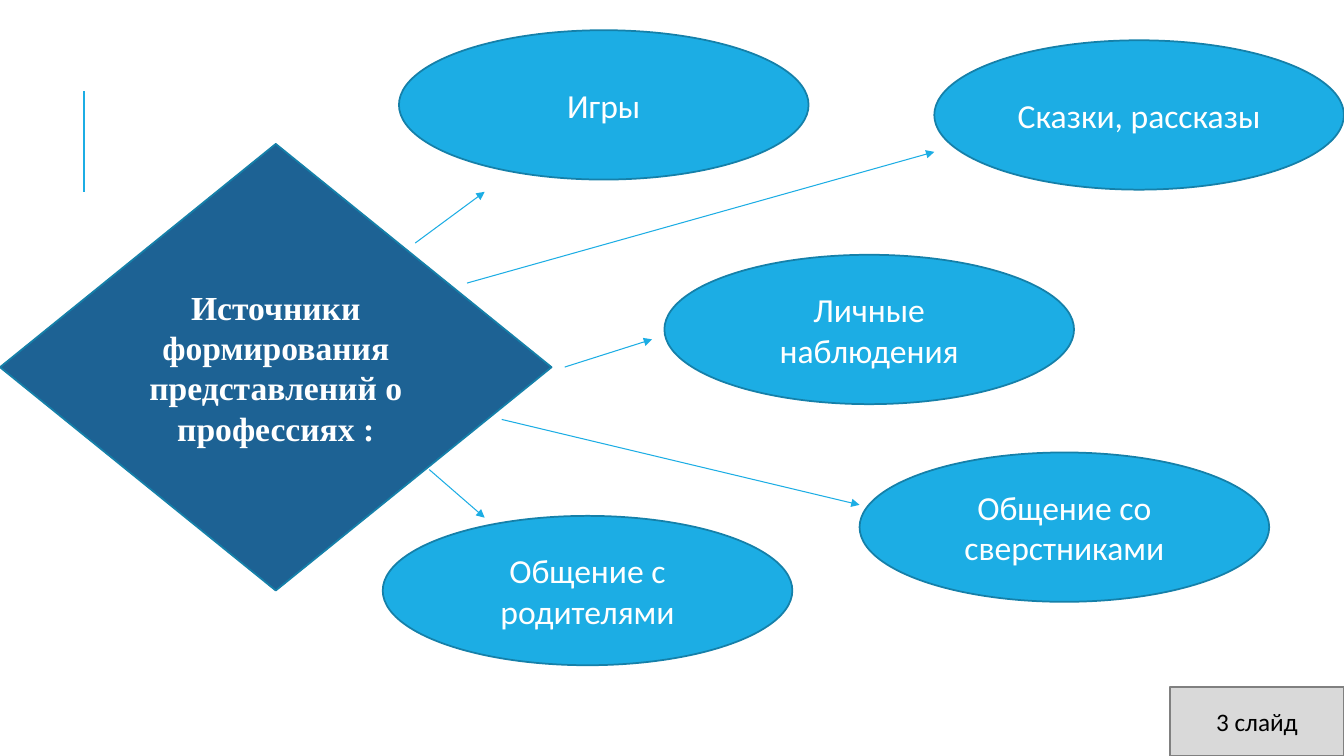
import pptx
import pptx.util
import pptx.dml.color
import pptx.enum.shapes
import pptx.enum.text
import pptx.oxml
import pptx.oxml.ns

Pt = pptx.util.Pt
RGB = pptx.dml.color.RGBColor.from_string
MSO = pptx.enum.shapes.MSO_SHAPE
qn = pptx.oxml.ns.qn

THEME = {
    "accent": "1CADE4", "outline": "1580A9", "dark": "1D6294",
    "grey": "D9D9D9", "grey_line": "808080", "white": "FFFFFF", "black": "000000",
    "body": 24, "label": 18, "sans": "Calibri", "serif": "Times New Roman",
}


def add_node(kind, box, text, fill, line, color, font):
    sp = s.shapes.add_shape(kind, *map(Pt, box))
    sp.shadow.inherit = False
    sp.fill.solid()
    sp.fill.fore_color.rgb = RGB(THEME[fill])
    sp.line.color.rgb = RGB(THEME[line])
    sp.line.width = Pt(1.25)
    tf = sp.text_frame
    tf.word_wrap = True
    tf.vertical_anchor = pptx.enum.text.MSO_ANCHOR.MIDDLE
    p = tf.paragraphs[0]
    p.alignment = pptx.enum.text.PP_ALIGN.CENTER
    r = p.add_run()
    r.text = text
    r.font.color.rgb = RGB(THEME[color])
    for name, value in font.items():
        setattr(r.font, name, value)


def add_line(ends, width, arrow):
    c = s.shapes.add_connector(pptx.enum.shapes.MSO_CONNECTOR.STRAIGHT, *map(Pt, ends))
    c.line.color.rgb = RGB(THEME["accent"])
    c.line.width = Pt(width)
    if arrow:
        tail = pptx.oxml.parse_xml(f'<a:tailEnd {pptx.oxml.ns.nsdecls("a")} type="triangle"/>')
        c.line._get_or_add_ln().append(tail)
    c._element.spPr.append(c._element.makeelement(qn("a:effectLst")))


prs = pptx.Presentation()
prs.slide_width, prs.slide_height = Pt(960), Pt(540)
s = prs.slides.add_slide(prs.slide_layouts[6])

body = {"name": THEME["sans"], "size": Pt(THEME["body"])}
heading = {"name": THEME["serif"], "size": Pt(THEME["body"]), "bold": True}
label = {"name": THEME["sans"], "size": Pt(THEME["label"])}

add_line((60, 136.8, 60, 64.8), 1.5, False)

add_node(MSO.DIAMOND, (0, 102.8, 394, 319), "Источники формирования представлений о профессиях :",
         "dark", "outline", "white", heading)
add_node(MSO.RECTANGLE, (835.8, 490.8, 124.2, 49.2), "3 слайд",
         "grey", "grey_line", "black", label)

sources = [
    (285, 21.6, "Игры"),
    (667.4, 28.8, "Сказки, рассказы"),
    (474.6, 182, "Личные наблюдения"),
    (614, 323.2, "Общение со сверстниками"),
    (273.4, 368.5, "Общение с родителями"),
]
for left, top, text in sources:
    add_node(MSO.OVAL, (left, top, 292.6, 106.7), text, "accent", "outline", "white", body)

arrows = [
    (296.6, 173.6, 346.2, 137),
    (403.4, 262.2, 465.8, 242.4),
    (333.6, 202.2, 667.4, 108.5),
    (358.4, 299.6, 614, 360.6),
    (306.6, 335.4, 346.2, 369.8),
]
for ends in arrows:
    add_line(ends, 0.75, True)

prs.save("out.pptx")
